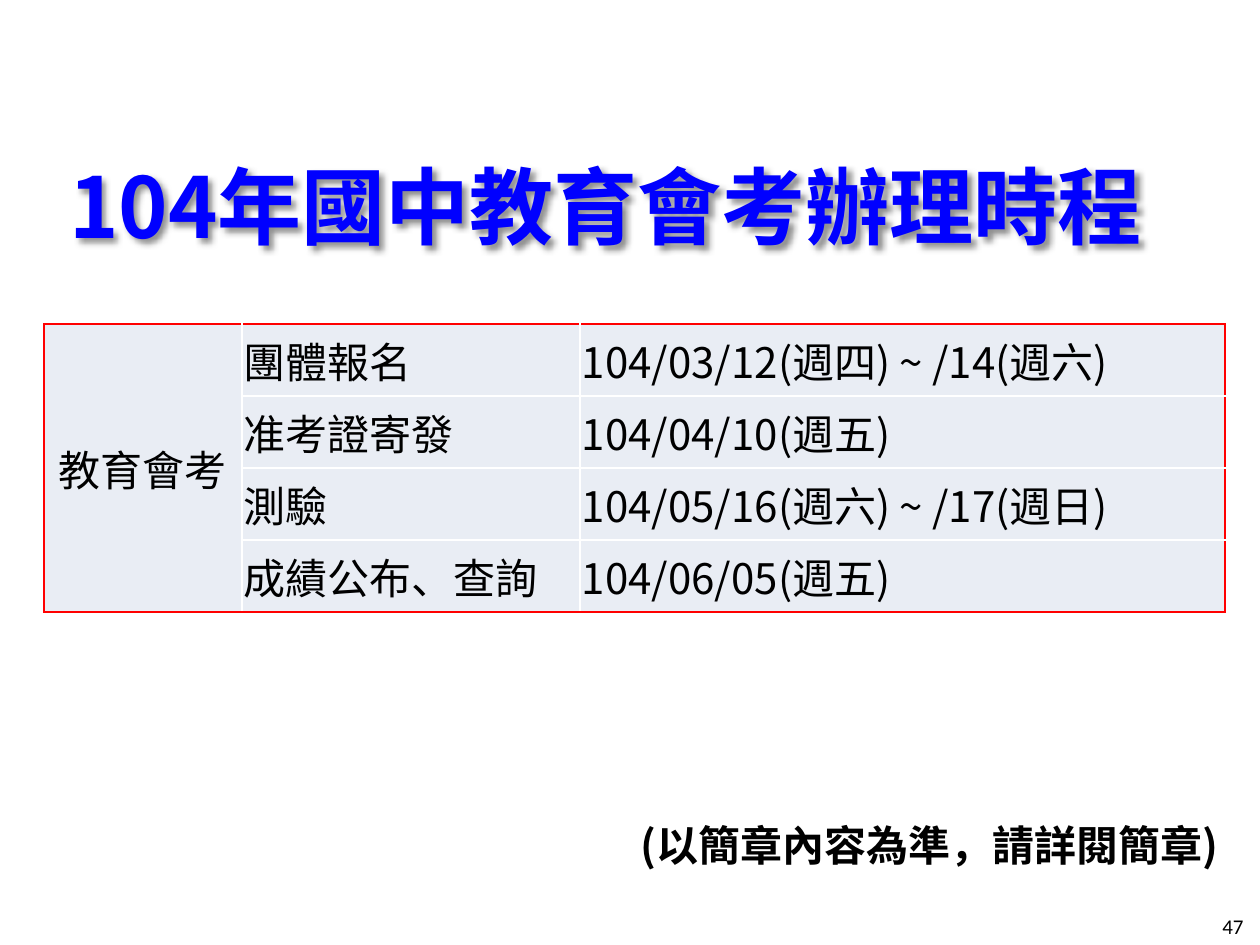
from dataclasses import dataclass

from lxml import etree
from pptx import Presentation
from pptx.dml.color import RGBColor
from pptx.enum.text import MSO_ANCHOR, PP_ALIGN
from pptx.oxml import parse_xml
from pptx.oxml.ns import nsdecls, qn
from pptx.util import Emu, Pt

CENTER, LEFT = PP_ALIGN.CENTER, PP_ALIGN.LEFT
MIDDLE, TOP = MSO_ANCHOR.MIDDLE, MSO_ANCHOR.TOP
PIXELS_PER_INCH = 126


@dataclass(frozen=True)
class Theme:
    """Colours, fonts and type sizes of the slide."""
    cjk_font: str = "Noto Sans CJK SC"
    number_font: str = "Calibri"
    title_color: str = "0000FF"
    text_color: str = "000000"
    cell_fill: str = "E9EDF4"
    outer_border: str = "FF0000"
    inner_border: str = "FFFFFF"
    title_size: int = 48
    body_size: int = 24
    number_size: int = 12


THEME = Theme()
GROUP = "教育會考"
SCHEDULE = [
    ("團體報名", "104/03/12(週四) ~ /14(週六)"),
    ("准考證寄發", "104/04/10(週五)"),
    ("測驗", "104/05/16(週六) ~ /17(週日)"),
    ("成績公布、查詢", "104/06/05(週五)"),
]
COLUMN_WIDTHS = (198, 338, 645)
ROW_HEIGHT = 72


def px(length):
    """Turn pixels into EMU."""
    return Emu(round(length * 914400 / PIXELS_PER_INCH))


def write(frame, text, size, color=THEME.text_color, font=THEME.cjk_font,
          bold=False, align=LEFT):
    """Write one styled run into the first paragraph of a frame."""
    para = frame.paragraphs[0]
    para.alignment = align
    span = para.add_run()
    span.text = text
    span.font.size = Pt(size)
    span.font.bold = bold
    span.font.color.rgb = RGBColor.from_string(color)
    span.font.name = font
    east_asian = etree.SubElement(span.font._element, qn("a:ea"))
    east_asian.set("typeface", font)


def add_text(page, bounds, text, size, anchor=TOP, **style):
    """Add a wrapping text box and return it."""
    box = page.shapes.add_textbox(*map(px, bounds))
    box.text_frame.word_wrap = True
    box.text_frame.vertical_anchor = anchor
    write(box.text_frame, text, size, **style)
    return box


def add_soft_shadow(box):
    """Give a text box a soft shadow to the lower right."""
    box._element.spPr.append(parse_xml(
        f'<a:effectLst {nsdecls("a")}>'
        '<a:outerShdw blurRad="38100" dist="38100" dir="2700000" algn="tl">'
        '<a:srgbClr val="000000"><a:alpha val="43000"/></a:srgbClr>'
        '</a:outerShdw></a:effectLst>'))


def style_cell(cell, outer_sides):
    """Set fill, insets and borders, with the outer colour on given sides."""
    cell.fill.solid()
    cell.fill.fore_color.rgb = RGBColor.from_string(THEME.cell_fill)
    cell.vertical_anchor = MIDDLE
    cell.margin_left = cell.margin_right = px(2)
    cell.margin_top = cell.margin_bottom = 0
    properties = cell._tc.get_or_add_tcPr()
    for index, side in enumerate("LRTB"):
        color = THEME.outer_border if side in outer_sides else THEME.inner_border
        properties.insert(index, parse_xml(
            f'<a:ln{side} {nsdecls("a")} w="12700"><a:solidFill>'
            f'<a:srgbClr val="{color}"/></a:solidFill></a:ln{side}>'))


def add_schedule(page, left, top):
    """Add the schedule table with its merged group column."""
    rows, columns = len(SCHEDULE), len(COLUMN_WIDTHS)
    table = page.shapes.add_table(
        rows, columns, px(left), px(top),
        px(sum(COLUMN_WIDTHS)), px(rows * ROW_HEIGHT)).table
    table.first_row = table.horz_banding = False
    for column, width in zip(table.columns, COLUMN_WIDTHS):
        column.width = px(width)
    group = table.cell(0, 0)
    group.merge(table.cell(rows - 1, 0))
    write(group.text_frame, GROUP, THEME.body_size, align=CENTER)
    for r, entry in enumerate(SCHEDULE):
        table.rows[r].height = px(ROW_HEIGHT)
        for c in range(columns):
            cell = table.cell(r, c)
            edges = {"L": c == 0, "R": c == columns - 1, "T": r == 0,
                     "B": r == rows - 1 or cell.is_merge_origin}
            style_cell(cell, [side for side, outer in edges.items() if outer])
            if c:
                write(cell.text_frame, entry[c - 1], THEME.body_size)


def main():
    """Build the slide and save the deck."""
    deck = Presentation()
    deck.slide_width, deck.slide_height = px(1260), px(945)
    page = deck.slides.add_slide(deck.slide_layouts[6])
    add_text(page, (1210, 907, 64, 38), "47", THEME.number_size,
             font=THEME.number_font)
    add_text(page, (628, 813, 605, 63), "(以簡章內容為準，請詳閱簡章)",
             THEME.body_size, bold=True)
    title = add_text(page, (14, 135, 1183, 140), "104年國中教育會考辦理時程",
                     THEME.title_size, anchor=MIDDLE, color=THEME.title_color,
                     bold=True, align=CENTER)
    add_soft_shadow(title)
    add_schedule(page, 44, 324)
    deck.save("out.pptx")


if __name__ == "__main__":
    main()
